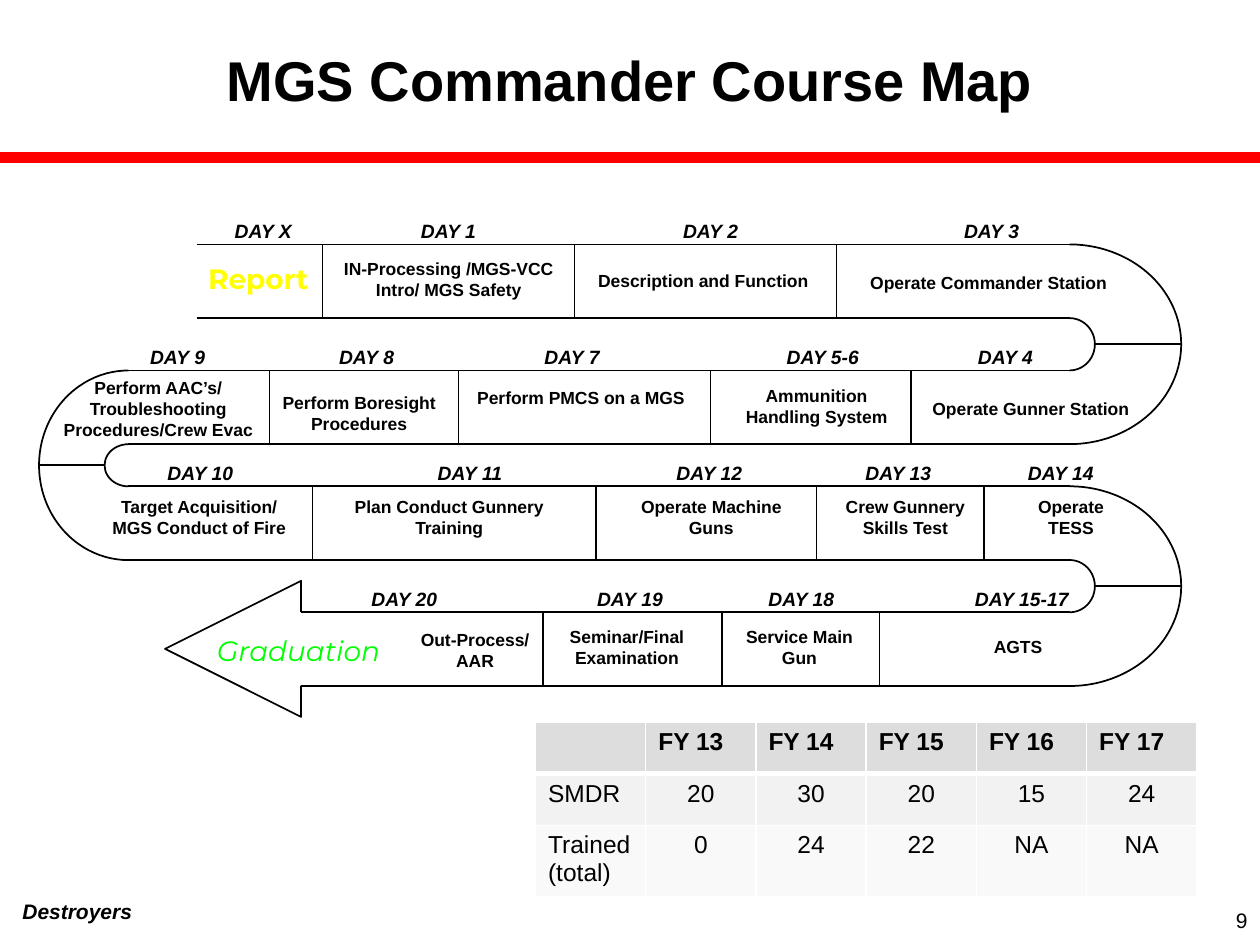
from collections import namedtuple

from lxml import etree
from pptx import Presentation
from pptx import util as u
from pptx.dml.color import RGBColor
from pptx.enum import shapes, text
from pptx.oxml import ns

BLACK = RGBColor(0x00, 0x00, 0x00)
WHITE = RGBColor(0xFF, 0xFF, 0xFF)
RED = RGBColor(0xFF, 0x00, 0x00)
YELLOW = RGBColor(0xFF, 0xFF, 0x00)
GREEN = RGBColor(0x00, 0xFF, 0x00)
ROW_FILLS = [RGBColor(0xDD, 0xDD, 0xDD), RGBColor(0xF2, 0xF2, 0xF2), RGBColor(0xF9, 0xF9, 0xF9)]

WIDTH, HEIGHT = u.Inches(10), u.Inches(7.5)
COLUMN, ROW = WIDTH / 100, HEIGHT / 75
BAND = 5.85
LEFT_END, RIGHT_END = 10.2, 84.9
CENTER, LEFT, RIGHT = text.PP_ALIGN.CENTER, text.PP_ALIGN.LEFT, text.PP_ALIGN.RIGHT

Box = namedtuple("Box", "x y w h")
Station = namedtuple("Station", "day day_center topic x y w h")

BANDS = [
    (Box(15.6, 19.4, RIGHT_END - 15.6, BAND), [25.6, 45.6, 66.4], [
        Station("DAY X", 20.9, [], 0, 0, 0, 0),
        Station("DAY 1", 35.6, ["IN-Processing /MGS-VCC Intro/ MGS Safety"], 25.7, 0.6, 19.8, 4.3),
        Station("DAY 2", 56.4, ["Description and Function"], 46.2, 1.5, 19.2, 2.7),
        Station("DAY 3", 78.7, ["Operate Commander Station"], 66.8, 1.7, 23.3, 2.7)]),
    (Box(LEFT_END, 29.4, RIGHT_END - LEFT_END, BAND), [21.4, 36.4, 56.4, 72.3], [
        Station("DAY 9", 14.1, ["Perform AAC’s/ Troubleshooting Procedures/Crew Evac"], 3.8, 0, 17.5, 6.1),
        Station("DAY 8", 29.1, ["Perform Boresight Procedures"], 20.6, 1.2, 15.8, 4.4),
        Station("DAY 7", 45.4, ["Perform PMCS on a MGS"], 36.1, 0.8, 20, 2.7),
        Station("DAY 5-6", 65.3, ["Ammunition Handling System"], 57.7, 0.7, 14.2, 4.4),
        Station("DAY 4", 79.8, ["Operate Gunner Station"], 71.8, 1.7, 20, 2.7)]),
    (Box(LEFT_END, 38.6, RIGHT_END - LEFT_END, BAND), [24.8, 47.3, 64.8, 78.1], [
        Station("DAY 10", 15.9, ["Target Acquisition/", "MGS Conduct of Fire"], 7.8, 0.3, 16, 4.4),
        Station("DAY 11", 37.3, ["Plan Conduct Gunnery Training"], 24.8, 0.3, 21.7, 4.4),
        Station("DAY 12", 56.3, ["Operate Machine Guns"], 48.1, 0.3, 16.7, 4.4),
        Station("DAY 13", 71.3, ["Crew Gunnery Skills Test"], 65.6, 0.3, 12.5, 4.4),
        Station("DAY 14", 84.2, ["Operate", "TESS"], 77.5, 0.3, 15, 4.4)]),
    (Box(23.9, 48.6, RIGHT_END - 23.9, BAND), [43.1, 57.3, 69.8], [
        Station("DAY 20", 32.1, ["Out-Process/", "AAR"], 32.1, 0.8, 11.2, 4.4),
        Station("DAY 19", 50, ["Seminar/Final Examination"], 43.5, 0.6, 12.5, 4.4),
        Station("DAY 18", 63.6, ["Service Main Gun"], 57.6, 0.6, 11.7, 4.4),
        Station("DAY 15-17", 81.1, ["AGTS"], 70.8, 1.4, 20, 2.7)]),
]

ENROLLMENT = [
    ["", "FY 13", "FY 14", "FY 15", "FY 16", "FY 17"],
    ["SMDR", "20", "30", "20", "15", "24"],
    ["Trained (total)", "0", "24", "22", "NA", "NA"],
]


def place(box):
    """Convert a box in grid units to slide lengths."""
    return [round(v) for v in (box.x * COLUMN, box.y * ROW, box.w * COLUMN, box.h * ROW)]


def write(frame, lines, size, color=BLACK, bold=True, italic=False, align=CENTER, font="Arial"):
    """Fill a text frame with one run per paragraph and return the runs."""
    frame.word_wrap = True
    runs = []
    for index, line in enumerate(lines):
        paragraph = frame.paragraphs[0] if index == 0 else frame.add_paragraph()
        paragraph.alignment = align
        run = paragraph.add_run()
        run.text = line
        run.font.name, run.font.size = font, u.Pt(size)
        run.font.bold, run.font.italic = bold, italic
        run.font.color.rgb = color
        runs.append(run)
    return runs


def add_text(slide, box, lines, size, anchor=text.MSO_ANCHOR.TOP, **style):
    """Add a text box and return its runs."""
    frame = slide.shapes.add_textbox(*place(box)).text_frame
    frame.vertical_anchor = anchor
    return write(frame, lines, size, **style)


def add_line(slide, x1, y1, x2, y2, color=BLACK, weight=1):
    """Draw a straight line between two grid points."""
    ends = [round(v) for v in (x1 * COLUMN, y1 * ROW, x2 * COLUMN, y2 * ROW)]
    line = slide.shapes.add_connector(shapes.MSO_CONNECTOR.STRAIGHT, *ends)
    line.line.color.rgb, line.line.width = color, u.Pt(weight)
    etree.SubElement(line._element.spPr, ns.qn("a:effectLst"))


def outline(shape):
    """Leave a shape with only a thin black line."""
    shape.shadow.inherit = False
    shape.fill.background()
    shape.line.color.rgb, shape.line.width = BLACK, u.Pt(1)


def add_header(slide, box):
    """Place the title above its red rule."""
    add_text(slide, Box(box.x + 5, box.y, box.w - 10, box.h), ["MGS Commander Course Map"], 32,
             anchor=text.MSO_ANCHOR.MIDDLE)
    add_line(slide, box.x, box.y + box.h, box.x + box.w, box.y + box.h, RED, 6)


def add_band(slide, box, dividers, stations):
    """Draw one straight stretch of the course with its days and topics."""
    for y in (box.y, box.y + box.h):
        add_line(slide, box.x, y, box.x + box.w, y)
    for x in dividers:
        add_line(slide, x, box.y, x, box.y + box.h)
    for stop in stations:
        add_text(slide, Box(stop.day_center - 5, box.y - 2.5, 10, 2.8), [stop.day], 11, italic=True)
        if stop.topic:
            add_text(slide, Box(stop.x, box.y + stop.y, stop.w, stop.h), stop.topic, 10)


def add_turn(slide, box, side, inner_radius):
    """Join two bands with a bend whose full ellipse fills the box."""
    center = box.x + box.w / 2
    inner = Box(center - inner_radius, box.y + BAND, 2 * inner_radius, box.h - 2 * BAND)
    angles = (270, 90) if side > 0 else (90, 270)
    for ellipse in (box, inner):
        bend = slide.shapes.add_shape(shapes.MSO_SHAPE.ARC, *place(ellipse))
        for index, angle in enumerate(angles):
            bend.adjustments[index] = angle * 0.6
        outline(bend)
    middle = inner.y + inner.h / 2
    add_line(slide, center + side * inner_radius, middle, center + side * box.w / 2, middle)


def add_milestone(slide, box, name, color, weight, **style):
    """Write an outlined start or finish word."""
    run = add_text(slide, box, [name], 16, color=color, font="Montserrat", **style)[0]
    edge = etree.Element(ns.qn("a:ln"), w=str(u.Pt(weight)))
    fill = etree.SubElement(edge, ns.qn("a:solidFill"))
    etree.SubElement(fill, ns.qn("a:srgbClr"), val=str(BLACK))
    run._r.get_or_add_rPr().insert(0, edge)


def add_arrowhead(slide, box):
    """Draw the open arrowhead that ends the course."""
    right, neck = box.x + box.w, (box.h - BAND) / 2
    points = [(right, box.y + neck), (right, box.y), (box.x, box.y + box.h / 2),
              (right, box.y + box.h), (right, box.y + box.h - neck)]
    points = [(round(x * COLUMN), round(y * ROW)) for x, y in points]
    builder = slide.shapes.build_freeform(*points[0])
    builder.add_line_segments(points[1:], close=False)
    outline(builder.convert_to_shape())


def add_border(cell, edge, weight):
    """Give one side of a cell a white border."""
    line = etree.SubElement(cell._tc.get_or_add_tcPr(), ns.qn("a:" + edge), w=str(u.Pt(weight)))
    fill = etree.SubElement(line, ns.qn("a:solidFill"))
    etree.SubElement(fill, ns.qn("a:srgbClr"), val=str(WHITE))


def add_enrollment(slide, box):
    """Place the table of yearly seats and graduates."""
    rows, columns = len(ENROLLMENT), len(ENROLLMENT[0])
    table = slide.shapes.add_table(rows, columns, *place(box)).table
    for r, values in enumerate(ENROLLMENT):
        for c, value in enumerate(values):
            cell = table.cell(r, c)
            for edge in ("lnL", "lnR", "lnT", "lnB"):
                heavy = (r, edge) in ((0, "lnB"), (1, "lnT"))
                add_border(cell, edge, 3 if heavy else 1)
            cell.fill.solid()
            cell.fill.fore_color.rgb = ROW_FILLS[r]
            if value:
                write(cell.text_frame, [value], 14, bold=r == 0, align=CENTER if r and c else LEFT)


def add_footer(slide, box):
    """Place the unit name and the page number."""
    add_text(slide, Box(box.x + 0.8, box.y, 14, 3), ["Destroyers"], 12, italic=True, align=LEFT)
    add_text(slide, Box(box.x + box.w - 23.3, box.y + 0.2, 23.3, 4), ["9"], 12, bold=False,
             align=RIGHT, anchor=text.MSO_ANCHOR.MIDDLE)


def main():
    """Build the course map slide."""
    deck = Presentation()
    deck.slide_width, deck.slide_height = WIDTH, HEIGHT
    slide = deck.slides.add_slide(deck.slide_layouts[6])
    add_header(slide, Box(0, 0, 100, 12.5))
    for box, dividers, stations in BANDS:
        add_band(slide, box, dividers, stations)
    tops = [band[0].y for band in BANDS]
    for index, (top, below) in enumerate(zip(tops, tops[1:])):
        side, end, outer, inner = (-1, LEFT_END, 7.1, 1.9) if index % 2 else (1, RIGHT_END, 8.85, 2)
        add_turn(slide, Box(end - outer, top, 2 * outer, below + BAND - top), side, inner)
    add_arrowhead(slide, Box(13.1, 46.1, 10.8, 10.8))
    add_milestone(slide, Box(14.5, 20.3, 12, 3.3), "Report", YELLOW, 1.5)
    add_milestone(slide, Box(14.7, 49.8, 18, 3.1), "Graduation", GREEN, 0.75, bold=False, italic=True)
    add_enrollment(slide, Box(42.5, 57.3, 52.5, 12.3))
    add_footer(slide, Box(0, 70.8, 100, 4.2))
    deck.save("out.pptx")


if __name__ == "__main__":
    main()
